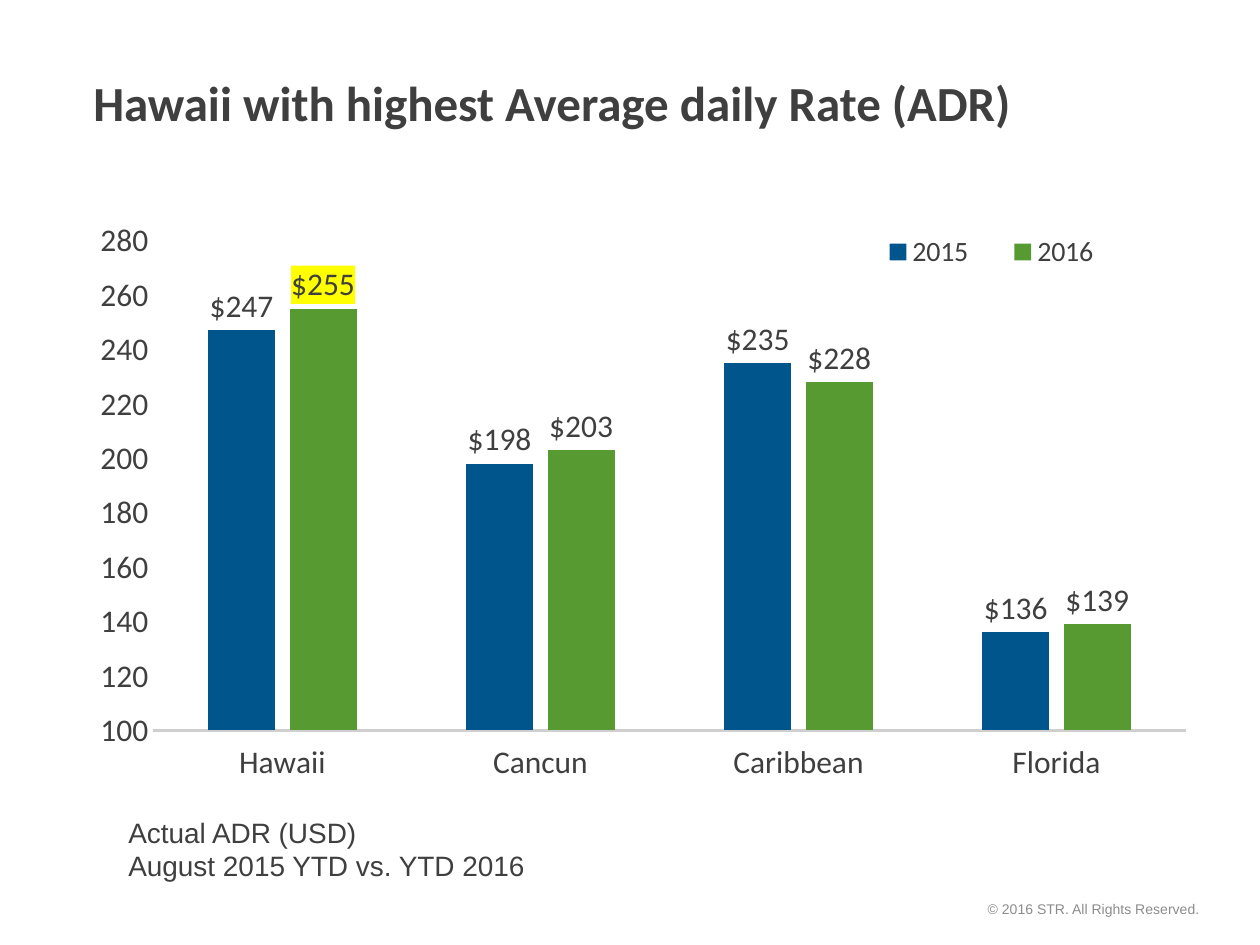
from lxml import etree
from pptx import Presentation
from pptx.chart.data import CategoryChartData
from pptx.dml.color import RGBColor
from pptx.enum.chart import (XL_CHART_TYPE, XL_LABEL_POSITION,
                             XL_LEGEND_POSITION, XL_TICK_LABEL_POSITION,
                             XL_TICK_MARK)
from pptx.enum.text import MSO_ANCHOR, PP_ALIGN
from pptx.oxml import parse_xml
from pptx.oxml.ns import nsdecls, qn
from pptx.util import Inches, Pt

COLUMN = XL_CHART_TYPE.COLUMN_CLUSTERED
OUTSIDE = XL_LABEL_POSITION.OUTSIDE_END
TOP = XL_LEGEND_POSITION.TOP
LOW = XL_TICK_LABEL_POSITION.LOW
NO_TICK = XL_TICK_MARK.NONE
MIDDLE = MSO_ANCHOR.MIDDLE
LEFT, RIGHT = PP_ALIGN.LEFT, PP_ALIGN.RIGHT

DARK = RGBColor(0x3F, 0x3F, 0x3F)
GREY = RGBColor(0x8C, 0x8C, 0x8C)
PALE = RGBColor(0xCF, 0xCF, 0xCF)
BLUE = RGBColor(0x00, 0x55, 0x8C)
GREEN = RGBColor(0x57, 0x9A, 0x32)
YELLOW = RGBColor(0xFF, 0xFF, 0x00)

DOLLAR = '"$"0'
PLACES = ["Hawaii", "Cancun", "Caribbean", "Florida"]
RATES = [("2015", [247, 198, 235, 136], BLUE),
         ("2016", [255, 203, 228, 139], GREEN)]


def style(font, size, color, name, bold=False):
    """Set the look of a font."""
    font.size, font.name, font.bold = Pt(size), name, bold
    font.color.rgb = color


def add_title(slide, text):
    """Fill and place the title."""
    title = slide.shapes.title
    title.left, title.top = Inches(0.64), Inches(0.46)
    title.width, title.height = Inches(8.08), Inches(0.7)
    frame = title.text_frame
    frame.text = text
    frame.vertical_anchor = MIDDLE
    line = frame.paragraphs[0]
    line.alignment = LEFT
    style(line.font, 28, DARK, "Calibri", True)


def add_note(slide, text, box, size, color, align=LEFT, wrap=True):
    """Add a text box with one paragraph."""
    frame = slide.shapes.add_textbox(*map(Inches, box)).text_frame
    frame.word_wrap = wrap
    line = frame.paragraphs[0]
    line.text = text
    line.alignment = align
    style(line.font, size, color, "Arial")


def make_layout(x, y, w, h, inner=False):
    """Return a manual layout in shares of the chart."""
    layout = etree.Element(qn("c:layout"))
    manual = etree.SubElement(layout, qn("c:manualLayout"))
    parts = [("layoutTarget", "inner")] if inner else []
    parts += [("xMode", "edge"), ("yMode", "edge"),
              ("x", x), ("y", y), ("w", w), ("h", h)]
    for tag, value in parts:
        etree.SubElement(manual, qn(f"c:{tag}")).set("val", str(value))
    return layout


def set_layout(part, layout, index):
    """Put a layout into a chart part in place of any old one."""
    for old in part.findall(qn("c:layout")):
        part.remove(old)
    part.insert(index, layout)


def mark_label(series, index, color):
    """Give one data label a filled background."""
    label = series.points[index].data_label
    style(label.font, 18, DARK, "Calibri")
    label.position = OUTSIDE
    text = series._element.find(f".//{qn('c:dLbl')}/{qn('c:txPr')}")
    text.addprevious(parse_xml(
        f"<c:numFmt {nsdecls('c')} formatCode='{DOLLAR}' sourceLinked='0'/>"))
    text.addprevious(parse_xml(
        f"<c:spPr {nsdecls('c', 'a')}><a:solidFill>"
        f"<a:srgbClr val='{color}'/></a:solidFill></c:spPr>"))


def style_axes(chart):
    """Format both axes."""
    places, rates = chart.category_axis, chart.value_axis
    for axis in (places, rates):
        axis.major_tick_mark = axis.minor_tick_mark = NO_TICK
        axis.has_major_gridlines = False
    places.tick_label_position = LOW
    places.format.line.color.rgb = PALE
    places.format.line.width = Pt(1.5)
    rates.minimum_scale, rates.maximum_scale = 100, 280
    rates.major_unit = 20
    rates.format.line.fill.background()
    rates.tick_labels.number_format = "0"
    rates.tick_labels.number_format_is_linked = False


def add_legend(chart):
    """Add the legend at the top right."""
    chart.has_legend = True
    legend = chart.legend
    legend.position = TOP
    legend.include_in_layout = False
    style(legend.font, 16, DARK, "Calibri")
    set_layout(legend._element, make_layout(0.7, 0.02, 0.25, 0.08), 1)


def add_rates(slide):
    """Add the column chart of daily rates."""
    data = CategoryChartData(number_format="0")
    data.categories = PLACES
    for name, values, _ in RATES:
        data.add_series(name, values)
    box = map(Inches, (0.6, 1.73, 8.82, 4.52))
    chart = slide.shapes.add_chart(COLUMN, *box, data).chart
    chart.has_title = False
    style(chart.font, 18, DARK, "Calibri")
    plot = chart.plots[0]
    plot.gap_width, plot.overlap = 164, -22
    plot.vary_by_categories = False
    for series, (_, _, color) in zip(plot.series, RATES):
        series.format.fill.solid()
        series.format.fill.fore_color.rgb = color
        labels = series.data_labels
        labels.show_value = True
        labels.position = OUTSIDE
        labels.number_format = DOLLAR
        labels.number_format_is_linked = False
        style(labels.font, 18, DARK, "Calibri")
    mark_label(plot.series[1], 0, YELLOW)
    style_axes(chart)
    add_legend(chart)
    area = chart._chartSpace.find(f".//{qn('c:plotArea')}")
    set_layout(area, make_layout(0.07, 0.04, 0.93, 0.86, True), 0)


def main():
    """Build the slide and save it."""
    deck = Presentation()
    deck.slide_width, deck.slide_height = Inches(10), Inches(7.5)
    slide = deck.slides.add_slide(deck.slide_layouts[5])
    add_note(slide, "© 2016 STR. All Rights Reserved.",
             (7, 7.1, 2.62, 0.24), 8, GREY, RIGHT)
    add_title(slide, "Hawaii with highest Average daily Rate (ADR)")
    add_rates(slide)
    add_note(slide, "Actual ADR (USD)\vAugust 2015 YTD vs. YTD 2016",
             (0.92, 6.42, 3.38, 0.64), 16, DARK, wrap=False)
    deck.save("out.pptx")


if __name__ == "__main__":
    main()
